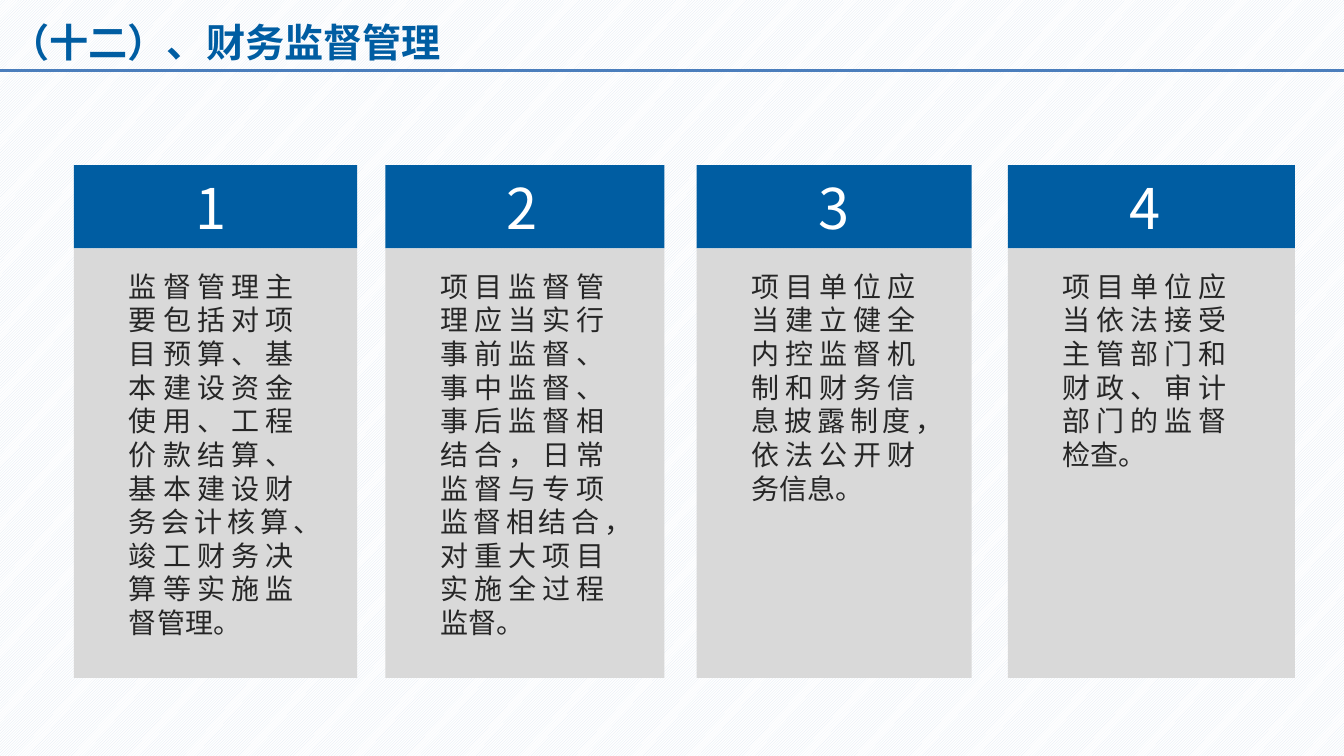
from pptx import Presentation
from pptx.dml.color import RGBColor
from pptx.enum.dml import MSO_PATTERN
from pptx.enum.shapes import MSO_CONNECTOR, MSO_SHAPE
from pptx.enum.text import MSO_ANCHOR, MSO_AUTO_SIZE, PP_ALIGN
from pptx.oxml.ns import qn
from pptx.util import Pt
from lxml import etree

RECTANGLE = MSO_SHAPE.RECTANGLE
STRAIGHT = MSO_CONNECTOR.STRAIGHT
CENTER, JUSTIFY = PP_ALIGN.CENTER, PP_ALIGN.JUSTIFY
FONT = "Noto Sans CJK SC"
EMU_PER_PX = 9080
COLORS = {
    "blue": "005DA2", "gray": "D9D9D9", "white": "FFFFFF",
    "ink": "262626", "rule": "4B7EBC", "stripe": "DCE6F2",
}
RGB = {name: RGBColor.from_string(value) for name, value in COLORS.items()}

CARD_LEFT, CARD_PITCH, TEXT_INSET = 74, 311, 45
CARDS = [
    (283, "监督管理主要包括对项目预算、基本建设资金使用、工程价款结算、基本建设财务会计核算、竣工财务决算等实施监督管理。", 383),
    (279, "项目监督管理应当实行事前监督、事中监督、事后监督相结合，日常监督与专项监督相结合，对重大项目实施全过程监督。", 383),
    (275, "项目单位应当建立健全内控监督机制和财务信息披露制度，依法公开财务信息。", 248),
    (287, "项目单位应当依法接受主管部门和财政、审计部门的监督检查。", 214),
]


def px(*lengths):
    return [length * EMU_PER_PX for length in lengths]


def write(holder, text, size, color, align, bold=False):
    frame = holder.text_frame
    frame_format = {
        "word_wrap": True, "auto_size": MSO_AUTO_SIZE.SHAPE_TO_FIT_TEXT,
        "vertical_anchor": MSO_ANCHOR.TOP,
    }
    for name, value in frame_format.items():
        setattr(frame, name, value)
    paragraph = frame.paragraphs[0]
    paragraph.alignment = align
    paragraph.line_spacing = Pt(size * 1.2)
    run = paragraph.add_run()
    run.text = text
    for name, value in {"name": FONT, "size": Pt(size), "bold": bold}.items():
        setattr(run.font, name, value)
    run.font.color.rgb = RGB[color]
    etree.SubElement(run.font._element, qn("a:ea"), typeface=FONT)


deck = Presentation()
deck.slide_width, deck.slide_height = px(1343, 755)
slide = deck.slides.add_slide(deck.slide_layouts[5])
shapes = slide.shapes

backdrop = slide.background.fill
backdrop.patterned()
backdrop.pattern = MSO_PATTERN.LIGHT_UPWARD_DIAGONAL
backdrop.fore_color.rgb = RGB["stripe"]
backdrop.back_color.rgb = RGB["white"]

title = shapes.title
for side, length in zip(("left", "top", "width", "height"), px(0, 13, 451, 57)):
    setattr(title, side, length)
write(title, "（十二）、财务监督管理", 28, "blue", CENTER, bold=True)

for index, (width, duty, duty_height) in enumerate(CARDS):
    left = CARD_LEFT + index * CARD_PITCH
    for top, height, color in ((165, 83, "blue"), (248, 429, "gray")):
        panel = shapes.add_shape(RECTANGLE, *px(left, top, width, height))
        panel.shadow.inherit = False
        panel.fill.solid()
        panel.fill.fore_color.rgb = RGB[color]
        panel.line.fill.background()
    text_left = left + TEXT_INSET
    number = shapes.add_textbox(*px(text_left, 168, 184, 78))
    write(number, str(index + 1), 40, "white", CENTER)
    body = shapes.add_textbox(*px(text_left, 264, 184, duty_height))
    write(body, duty, 20, "ink", JUSTIFY)

title_rule = shapes.add_connector(STRAIGHT, *px(0, 70, 1353, 70))
title_rule.line.color.rgb = RGB["rule"]
title_rule.line.width = Pt(2.25)
etree.SubElement(title_rule._element.spPr, qn("a:effectLst"))

deck.save("out.pptx")
